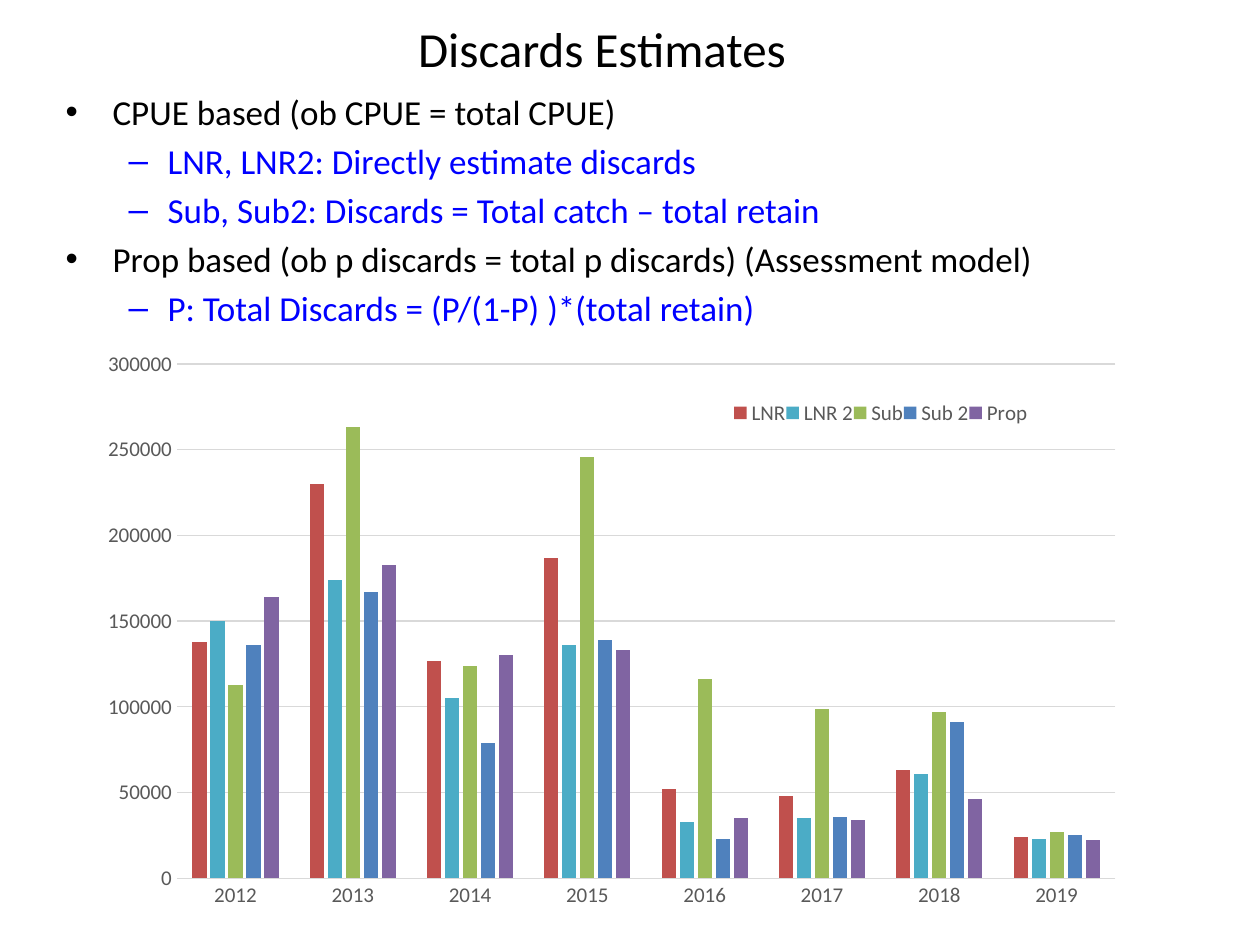
from pptx import Presentation
from pptx.chart.data import CategoryChartData
from pptx.dml.color import RGBColor
from pptx.enum.chart import XL_CHART_TYPE, XL_LEGEND_POSITION, XL_TICK_MARK
from pptx.enum.text import MSO_ANCHOR, MSO_AUTO_SIZE, PP_ALIGN
from pptx.oxml import parse_xml
from pptx.oxml.ns import nsdecls
from pptx.util import Pt

FONT = "Calibri"
TITLE = "Discards Estimates "
# Level and text of each bullet
POINTS = [
    (0, "CPUE based (ob CPUE = total CPUE)"),
    (1, "LNR, LNR2: Directly estimate discards"),
    (1, "Sub, Sub2: Discards = Total catch – total retain"),
    (0, "Prop based (ob p discards = total p discards) (Assessment model)"),
    (1, "P: Total Discards = (P/(1-P) )*(total retain)"),
]
# Colour, left margin and hanging indent (px) by level
LEVELS = [("000000", 47, -47), ("0000FF", 102, -39)]
YEARS = [str(year) for year in range(2012, 2020)]
# Name, colour, discards in thousands by year
SERIES = [
    ("LNR", "C0504D", [138, 230, 127, 187, 52, 48, 63, 24]),
    ("LNR 2", "4BACC6", [150, 174, 105, 136, 33, 35, 61, 23]),
    ("Sub", "9BBB59", [113, 263, 124, 246, 116, 99, 97, 27]),
    ("Sub 2", "4F81BD", [136, 167, 79, 139, 23, 36, 91, 25]),
    ("Prop", "8064A2", [164, 183, 130, 133, 35, 34, 46, 22]),
]


def px(n):
    return round(n * 914400 / 126)


def color(code):
    return RGBColor.from_string(code)


def style(font, size, code):
    font.name, font.size = FONT, Pt(size)
    font.color.rgb = color(code)


def place(shape, *box):
    shape.left, shape.top, shape.width, shape.height = map(px, box)


def write(para, text, size, code):
    run = para.add_run()
    run.text = text
    style(run.font, size, code)


def layout(x, y, w, h, inner=False):
    target = '<c:layoutTarget val="inner"/>' if inner else ""
    return parse_xml(
        f'<c:layout {nsdecls("c")}><c:manualLayout>{target}'
        '<c:xMode val="edge"/><c:yMode val="edge"/>'
        f'<c:x val="{x}"/><c:y val="{y}"/><c:w val="{w}"/><c:h val="{h}"/>'
        '</c:manualLayout></c:layout>')


def put_layout(node, new, after=None):
    for old in node.findall(new.tag):
        node.remove(old)
    if after is None:
        node.insert(0, new)
    else:
        after.addnext(new)


def rule(line):
    line.color.rgb = color("D9D9D9")
    line.width = Pt(0.75)


prs = Presentation()
prs.slide_width, prs.slide_height = px(1260), px(945)
slide = prs.slides.add_slide(prs.slide_layouts[1])

# Title
title = slide.shapes.title
place(title, 21, 0, 1173, 95)
frame = title.text_frame
frame.vertical_anchor = MSO_ANCHOR.MIDDLE
frame.auto_size = MSO_AUTO_SIZE.NONE
frame.paragraphs[0].alignment = PP_ALIGN.CENTER
write(frame.paragraphs[0], TITLE, 28, "000000")

# Bullets
body = slide.placeholders[1]
place(body, 53, 84, 1187, 262)
frame = body.text_frame
frame.auto_size = MSO_AUTO_SIZE.NONE
for i, (level, text) in enumerate(POINTS):
    para = frame.add_paragraph() if i else frame.paragraphs[0]
    code, left, hang = LEVELS[level]
    para.level = level
    props = para._p.get_or_add_pPr()
    props.set("marL", str(px(left)))
    props.set("indent", str(px(hang)))
    write(para, text, 20, code)

# Chart
data = CategoryChartData(number_format="0")
data.categories = YEARS
for name, _, vals in SERIES:
    data.add_series(name, [val * 1000 for val in vals])
chart = slide.shapes.add_chart(
    XL_CHART_TYPE.COLUMN_CLUSTERED, *map(px, (24, 273, 1092, 651)), data).chart
style(chart.font, 12, "000000")
chart.has_title = False
plot = chart.plots[0]
plot.gap_width, plot.overlap = 219, -27
plot.vary_by_categories = False
for series, (_, code, _) in zip(plot.series, SERIES):
    series.format.fill.solid()
    series.format.fill.fore_color.rgb = color(code)
put_layout(chart._chartSpace.chart.plotArea,
           layout(0.14, 0.14, 0.86, 0.79, True))

# Axes
cats, vals = chart.category_axis, chart.value_axis
for axis in (cats, vals):
    axis.major_tick_mark = axis.minor_tick_mark = XL_TICK_MARK.NONE
    style(axis.tick_labels.font, 12, "595959")
rule(cats.format.line)
vals.format.line.fill.background()
vals.minimum_scale, vals.maximum_scale, vals.major_unit = 0, 300000, 50000
vals.tick_labels.number_format = "0"
vals.tick_labels.number_format_is_linked = False
vals.has_major_gridlines = True
rule(vals.major_gridlines.format.line)

# Legend
chart.has_legend = True
legend = chart.legend
legend.position = XL_LEGEND_POSITION.BOTTOM
legend.include_in_layout = True
style(legend.font, 12, "595959")
put_layout(legend._element, layout(0.65, 0.14, 0.27, 0.15),
           legend._element.find("{*}legendPos"))

prs.save("out.pptx")
